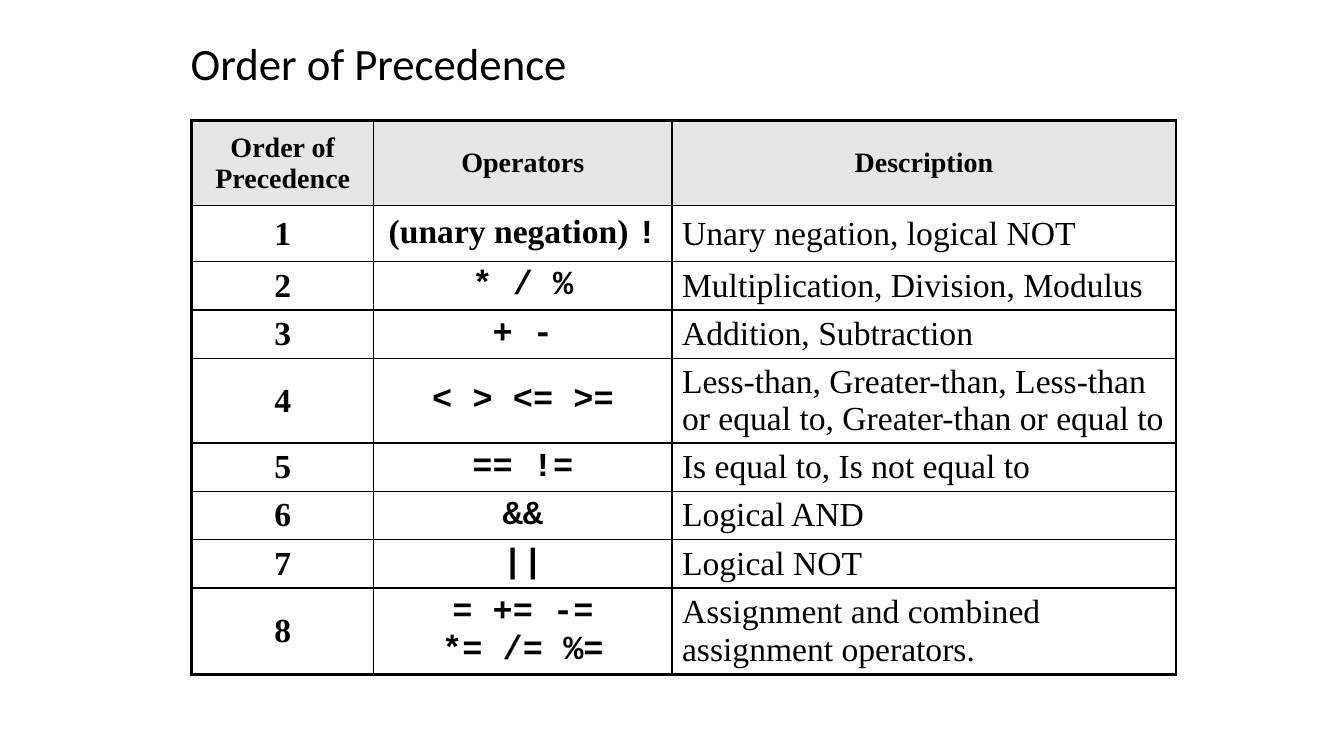
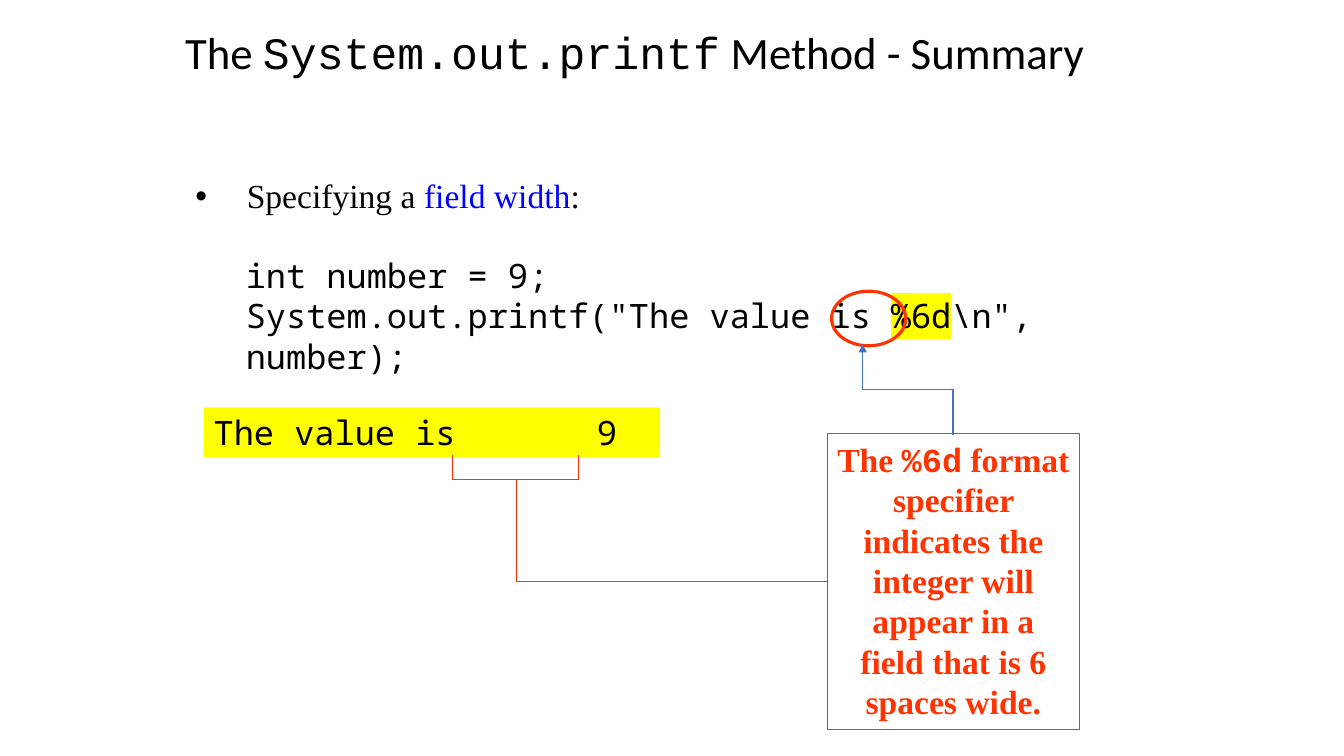
from lxml.etree import SubElement
from pptx import Presentation
from pptx.dml.color import RGBColor
from pptx.enum.shapes import MSO_CONNECTOR, MSO_SHAPE
from pptx.enum.text import MSO_ANCHOR, MSO_AUTO_SIZE, PP_ALIGN
from pptx.oxml import parse_xml
from pptx.oxml.ns import nsdecls, qn
from pptx.util import Pt

BLACK = RGBColor(0x00, 0x00, 0x00)
GRAY = RGBColor(0xE7, 0xE6, 0xE6)
BLUE = RGBColor(0x00, 0x00, 0xFF)
ARROW_BLUE = RGBColor(0x44, 0x72, 0xC4)
RED = RGBColor(0xFF, 0x33, 0x00)
YELLOW = RGBColor(0xFF, 0xFF, 0x00)
HEADING, SERIF, CODE, MONO = "Calibri", "Times New Roman", "Courier New", "Noto Sans Mono"
THIN, THICK = 1, 2.25


def write(paragraph, parts, size, color=BLACK, bold=False):
    """Fill a paragraph with (text, font name) parts that share size, colour and weight."""
    paragraph.font.size = Pt(size)
    paragraph.font.bold = bold
    paragraph.font.color.rgb = color
    for text, font_name in parts:
        run = paragraph.add_run()
        run.text = text
        run.font.name = font_name


def add_line(slide, kind, start, end, color, width):
    line = slide.shapes.add_connector(kind, *map(Pt, start + end))
    line.line.color.rgb = color
    line.line.width = Pt(width)
    SubElement(line._element.spPr, qn("a:effectLst"))
    return line


presentation = Presentation()
presentation.slide_width, presentation.slide_height = Pt(960), Pt(540)

# Slides and titles
titles = [
    ((129, 8, 331, 78), [("Order of Precedence", HEADING)]),
    ((125, 0, 665, 78), [("The ", HEADING), ("System.out.printf", CODE),
                         (" Method - Summary", HEADING)]),
]
slides = []
for box, parts in titles:
    slide = presentation.slides.add_slide(presentation.slide_layouts[5])
    title = slide.shapes.title
    title.left, title.top, title.width, title.height = map(Pt, box)
    title.text_frame.vertical_anchor = MSO_ANCHOR.MIDDLE
    title.text_frame.auto_size = MSO_AUTO_SIZE.NONE
    paragraph = title.text_frame.paragraphs[0]
    paragraph.alignment = PP_ALIGN.LEFT
    paragraph.line_spacing = 0.9
    write(paragraph, parts, 32)
    slides.append(slide)
table_slide, printf_slide = slides

# Precedence table
headers = ["Order of Precedence", "Operators", "Description"]
operators = [
    ("!", "Unary negation, logical NOT"),
    ("* / %", "Multiplication, Division, Modulus"),
    ("+ -", "Addition, Subtraction"),
    ("< > <= >=", "Less-than, Greater-than, Less-than or equal to, Greater-than or equal to"),
    ("== !=", "Is equal to, Is not equal to"),
    ("&&", "Logical AND"),
    ("||", "Logical NOT"),
    ("= += -=\n*= /= %=", "Assignment and combined assignment operators."),
]
rows = [headers] + [[str(order), *row] for order, row in enumerate(operators, 1)]
column_widths = [130, 213, 360]
row_heights = [61, 40, 34.5, 34.5, 60.5, 34.5, 34.5, 34.5, 60.5]
last_row, last_column = len(rows) - 1, len(headers) - 1

table = table_slide.shapes.add_table(
    len(rows), len(headers), Pt(137), Pt(86),
    Pt(sum(column_widths)), Pt(sum(row_heights))).table
table.first_row = table.horz_banding = False
for column, width in zip(table.columns, column_widths):
    column.width = Pt(width)
for row, height in zip(table.rows, row_heights):
    row.height = Pt(height)

for row_index, row in enumerate(rows):
    for column_index, text in enumerate(row):
        cell = table.cell(row_index, column_index)
        cell.vertical_anchor = MSO_ANCHOR.MIDDLE
        outer_edges = {"L": column_index == 0, "R": column_index == last_column,
                       "T": row_index == 0, "B": row_index == last_row}
        for side, is_outer in outer_edges.items():
            width = Pt(THICK if is_outer else THIN)
            cell._tc.get_or_add_tcPr().append(parse_xml(
                f'<a:ln{side} {nsdecls("a")} w="{width}"><a:solidFill>'
                f'<a:srgbClr val="{BLACK}"/></a:solidFill></a:ln{side}>'))
        is_header = row_index == 0
        if is_header:
            cell.fill.solid()
            cell.fill.fore_color.rgb = GRAY
        else:
            cell.fill.background()
        is_description = column_index == last_column and not is_header
        is_operator = column_index == 1 and not is_header
        for line_index, line_text in enumerate(text.split("\n")):
            frame = cell.text_frame
            paragraph = frame.add_paragraph() if line_index else frame.paragraphs[0]
            paragraph.alignment = PP_ALIGN.LEFT if is_description else PP_ALIGN.CENTER
            parts = [(line_text, CODE if is_operator else SERIF)]
            if line_text == "!":
                parts.insert(0, ("(unary negation) ", SERIF))
            write(paragraph, parts, 20 if is_header else 24, bold=not is_description)

# Bullet
shapes = printf_slide.shapes
bullet_box = shapes.add_textbox(Pt(132.5), Pt(125), Pt(576), Pt(360))
bullet_box.text_frame.word_wrap = True
paragraph = bullet_box.text_frame.paragraphs[0]
paragraph.line_spacing = 0.9
paragraph.space_before = Pt(10)
write(paragraph, [("Specifying a ", SERIF), ("field width", SERIF), (":", SERIF)], 24)
paragraph.runs[1].font.color.rgb = BLUE
properties = paragraph._p.get_or_add_pPr()
properties.set("marL", str(Pt(36.7)))
properties.set("indent", str(-Pt(36.7)))
bullet_font = parse_xml(f'<a:buFont {nsdecls("a")} typeface="Arial"/>')
bullet_character = parse_xml(f'<a:buChar {nsdecls("a")} char="•"/>')
default_font = properties.find(qn("a:defRPr"))
default_font.addprevious(bullet_font)
default_font.addprevious(bullet_character)

# Code sample
code_box = shapes.add_textbox(Pt(168.5), Pt(178.5), Pt(659), Pt(94))
code_frame = code_box.text_frame
code_frame.word_wrap = True
write(code_frame.paragraphs[0], [("int number = 9;", MONO)], 24)
paragraph = code_frame.add_paragraph()
write(paragraph, [('System.out.printf("The value is ', MONO), ("%6d", MONO),
                  ('\\n", number);', MONO)], 24)
highlight = parse_xml(f'<a:highlight {nsdecls("a")}><a:srgbClr val="{YELLOW}"/></a:highlight>')
paragraph.runs[1]._r.rPr.find(qn("a:latin")).addprevious(highlight)

# Ring, callout and program output
boxes = [
    (MSO_SHAPE.OVAL, (594, 208, 53, 39), None, RED, 2.25),
    (MSO_SHAPE.RECTANGLE, (591, 310, 180, 211), None, RED, 0.75),
    (MSO_SHAPE.RECTANGLE, (145.5, 291, 326, 36), YELLOW, None, 0),
]
box_shapes = []
for kind, box, fill, outline, width in boxes:
    shape = shapes.add_shape(kind, *map(Pt, box))
    shape.shadow.inherit = False
    if fill is None:
        shape.fill.background()
    else:
        shape.fill.solid()
        shape.fill.fore_color.rgb = fill
    if outline is None:
        shape.line.fill.background()
    else:
        shape.line.color.rgb = outline
        shape.line.width = Pt(width)
    shape.text_frame.vertical_anchor = MSO_ANCHOR.TOP
    shape.text_frame.word_wrap = True
    box_shapes.append(shape)
ring, callout, output = box_shapes

paragraph = callout.text_frame.paragraphs[0]
paragraph.alignment = PP_ALIGN.CENTER
write(paragraph, [
    ("The ", SERIF), ("%6d", CODE),
    (" format specifier indicates the integer will appear in a field that is 6 spaces wide.",
     SERIF)], 24, RED, bold=True)

paragraph = output.text_frame.paragraphs[0]
paragraph.alignment = PP_ALIGN.LEFT
write(paragraph, [(f"The value is{9:8d}", MONO)], 24)

# Bracket under the field, joined to the callout
left, right, stem, top, bottom, middle = 323, 413.5, 369, 325, 342.5, 415.5
for start, end in [((left, top), (left, bottom)), ((right, top), (right, bottom)),
                   ((left, bottom), (right, bottom)), ((stem, bottom), (stem, middle))]:
    add_line(printf_slide, MSO_CONNECTOR.STRAIGHT, start, end, RED, 0.75)
callout_line = add_line(printf_slide, MSO_CONNECTOR.STRAIGHT,
                        (stem, middle), (591, middle), RED, 0.75)
callout_line.end_connect(callout, 1)

# Arrow from the callout up to the ring; a quarter turn makes it leave vertically
arrow = add_line(printf_slide, MSO_CONNECTOR.ELBOW, (616, 310.5), (681, 246), ARROW_BLUE, 1)
arrow._element.spPr.find(qn("a:xfrm")).set("rot", str(270 * 60000))
SubElement(arrow.line._get_or_add_ln(), qn("a:tailEnd"), type="triangle")

presentation.save("out.pptx")
